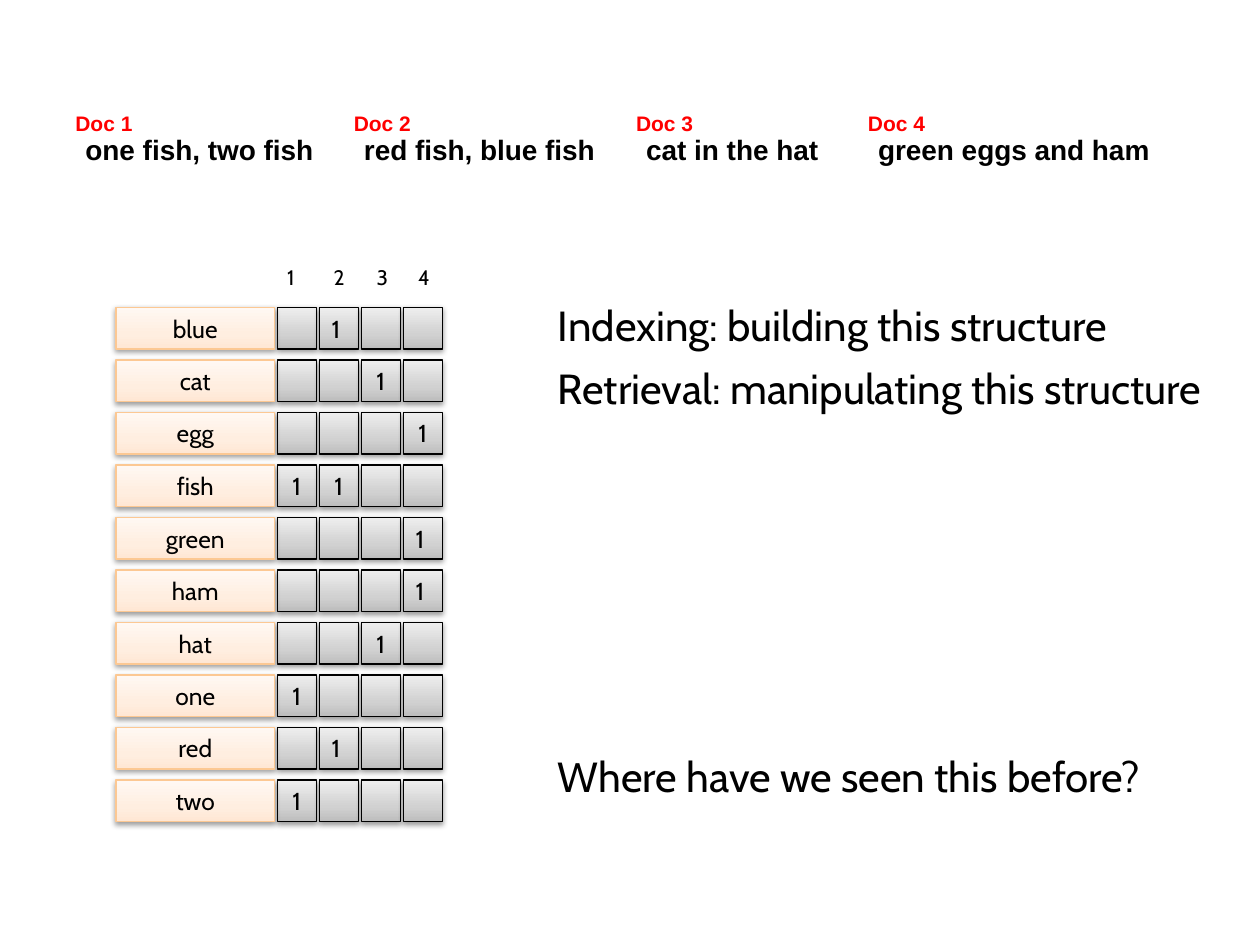
from copy import deepcopy
from dataclasses import dataclass

from lxml.etree import SubElement
from pptx import Presentation
from pptx.dml.color import RGBColor
from pptx.enum.shapes import MSO_SHAPE
from pptx.enum.text import MSO_ANCHOR, MSO_AUTO_SIZE, PP_ALIGN
from pptx.oxml.ns import qn
from pptx.util import Inches, Pt


@dataclass(frozen=True)
class Theme:
    heading_font: str = "Arial"
    body_font: str = "Cabin"
    black: str = "000000"
    red: str = "FF0000"
    term_line: str = "FCC893"
    term_fill: tuple = ("FFE7D4", "FFEEE0", "FFF8F3")
    cell_fill: tuple = ("BDBDBD", "D1D1D1", "EEEEEE")
    stops: tuple = (0, 0.35, 1)
    label_size: int = 12
    cell_size: int = 14
    doc_size: int = 16
    body_size: int = 24
    line_width: float = 0.75


DOCS = [
    ("Doc 1", "one fish, two fish", 0.5, 2.04),
    ("Doc 2", "red fish, blue fish", 2.71, 2.06),
    ("Doc 3", "cat in the hat", 4.95, 1.59),
    ("Doc 4", "green eggs and ham", 6.79, 2.38),
]
COLUMNS = [("1", 2.18), ("2", 2.55), ("3", 2.89), ("4", 3.22)]
POSTINGS = {
    "blue": [2], "cat": [3], "egg": [4], "fish": [1, 2], "green": [4],
    "ham": [4], "hat": [3], "one": [1], "red": [2], "two": [1],
}
LEFT_ALIGNED_TERMS = {"blue", "green", "ham", "red"}
NOTES = [
    ("Indexing: building this structure", 2.33, 4.92),
    ("Retrieval: manipulating this structure", 2.83, 5.67),
    ("Where have we seen this before?", 5.91, 5.67),
]
ROW_TOP, ROW_PITCH, ROW_HEIGHT = 2.44, 5 / 12, 0.33
TERM_LEFT, TERM_WIDTH = 0.92, 1.26
CELL_LEFT, CELL_PITCH, CELL_WIDTH = 2.2, 1 / 3, 0.31


def write_text(tf, text, *, font, size, color, bold=False,
               align=PP_ALIGN.LEFT, wrap=False):
    tf.word_wrap = wrap
    p = tf.paragraphs[0]
    p.alignment = align
    r = p.add_run()
    r.text = text
    r.font.name = font
    r.font.size = Pt(size)
    r.font.bold = bold
    r.font.color.rgb = RGBColor.from_string(color)


class SlideBuilder:
    def __init__(self, slide, theme):
        self.slide = slide
        self.theme = theme

    def text(self, text, left, top, width, height, shapes=None, **style):
        shapes = self.slide.shapes if shapes is None else shapes
        sp = shapes.add_textbox(
            Inches(left), Inches(top), Inches(width), Inches(height))
        write_text(sp.text_frame, text, **style)
        sp.text_frame.auto_size = MSO_AUTO_SIZE.SHAPE_TO_FIT_TEXT

    def document(self, label, text, left, width):
        t = self.theme
        shapes = self.slide.shapes.add_group_shape().shapes
        self.text(text, left + 0.08, 1, width, 0.37, shapes,
                  font=t.heading_font, size=t.doc_size, color=t.black, bold=True)
        self.text(label, left, 0.83, 0.66, 0.3, shapes,
                  font=t.heading_font, size=t.label_size, color=t.red, bold=True)

    def box(self, left, top, width, colors, line, text="", align=PP_ALIGN.CENTER):
        t = self.theme
        sp = self.slide.shapes.add_shape(
            MSO_SHAPE.RECTANGLE, Inches(left), Inches(top),
            Inches(width), Inches(ROW_HEIGHT))
        self.gradient(sp, colors)
        sp.line.color.rgb = RGBColor.from_string(line)
        sp.line.width = Pt(t.line_width)
        self.shadow(sp)
        sp.text_frame.vertical_anchor = MSO_ANCHOR.MIDDLE
        if text:
            write_text(sp.text_frame, text, font=t.body_font,
                       size=t.cell_size, color=t.black, align=align)

    def gradient(self, sp, colors):
        sp.fill.gradient()
        sp.fill.gradient_angle = 90
        stop_list = sp.element.spPr.find(".//" + qn("a:gsLst"))
        stop_list.insert(1, deepcopy(stop_list[0]))
        for stop, color, position in zip(
                sp.fill.gradient_stops, colors, self.theme.stops):
            stop.color.rgb = RGBColor.from_string(color)
            stop.position = position

    def shadow(self, sp):
        sp.shadow.inherit = False
        effects = sp.element.spPr.find(qn("a:effectLst"))
        shadow = SubElement(effects, qn("a:outerShdw"), blurRad="40000",
                            dist="20000", dir="5400000", rotWithShape="0")
        color = SubElement(shadow, qn("a:srgbClr"), val=self.theme.black)
        SubElement(color, qn("a:alpha"), val="38000")

    def term_row(self, index, term, docs):
        t = self.theme
        top = ROW_TOP + index * ROW_PITCH
        align = PP_ALIGN.LEFT if term in LEFT_ALIGNED_TERMS else PP_ALIGN.CENTER
        for column in range(len(COLUMNS)):
            self.box(CELL_LEFT + column * CELL_PITCH, top, CELL_WIDTH,
                     t.cell_fill, t.black,
                     "1" if column + 1 in docs else "", align)
        self.box(TERM_LEFT, top, TERM_WIDTH, t.term_fill, t.term_line, term)


def main():
    prs = Presentation()
    prs.slide_width, prs.slide_height = Inches(10), Inches(7.5)
    s = prs.slides.add_slide(prs.slide_layouts[6])
    theme = Theme()
    builder = SlideBuilder(s, theme)

    for doc in DOCS:
        builder.document(*doc)
    for index, (term, docs) in enumerate(POSTINGS.items()):
        builder.term_row(index, term, docs)
    for number, left in COLUMNS:
        builder.text(number, left, 2.05, 0.29, 0.3, font=theme.body_font,
                     size=theme.label_size, color=theme.black)
    for note, top, width in NOTES:
        builder.text(note, 4.33, top, width, 0.5, font=theme.body_font,
                     size=theme.body_size, color=theme.black, wrap=True)

    prs.save("out.pptx")


if __name__ == "__main__":
    main()
